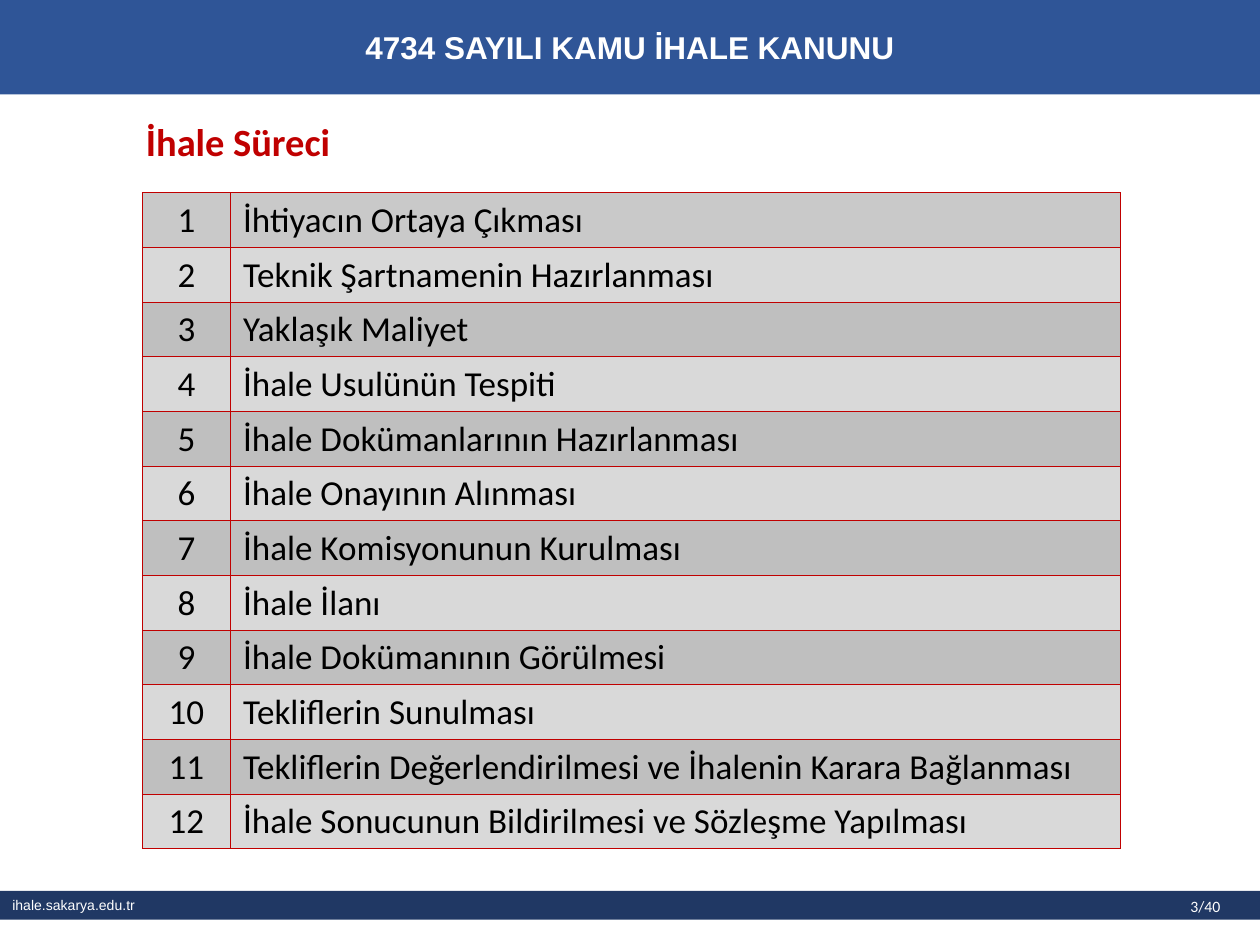
from dataclasses import dataclass

from lxml import etree
from pptx import Presentation
from pptx.dml.color import RGBColor
from pptx.enum.shapes import MSO_SHAPE
from pptx.enum.text import MSO_ANCHOR, PP_ALIGN
from pptx.oxml.ns import qn
from pptx.util import Inches, Pt

RECTANGLE = MSO_SHAPE.RECTANGLE
TOP, MIDDLE = MSO_ANCHOR.TOP, MSO_ANCHOR.MIDDLE
LEFT, CENTER = PP_ALIGN.LEFT, PP_ALIGN.CENTER
BLANK_LAYOUT = 6


@dataclass(frozen=True)
class Theme:
    header: str = "2F5597"
    footer: str = "203864"
    accent: str = "C00000"
    light: str = "FFFFFF"
    dark: str = "000000"
    first_row: str = "C9C9C9"
    bands: tuple = ("BFBFBF", "D9D9D9")
    bar_font: str = "Arial"
    body_font: str = "Calibri"
    header_size: int = 18
    heading_size: int = 22
    table_size: int = 20
    address_size: int = 8
    number_size: int = 9
    border_width: float = 0.5


THEME = Theme()

STEPS = [
    "İhtiyacın Ortaya Çıkması",
    "Teknik Şartnamenin Hazırlanması",
    "Yaklaşık Maliyet",
    "İhale Usulünün Tespiti",
    "İhale Dokümanlarının Hazırlanması",
    "İhale Onayının Alınması",
    "İhale Komisyonunun Kurulması",
    "İhale İlanı",
    "İhale Dokümanının Görülmesi",
    "Tekliflerin Sunulması",
    "Tekliflerin Değerlendirilmesi ve İhalenin Karara Bağlanması",
    "İhale Sonucunun Bildirilmesi ve Sözleşme Yapılması",
]


def write_text(frame, text, color, align=LEFT, anchor=MIDDLE, **font_format):
    frame.word_wrap = True
    frame.vertical_anchor = anchor
    para = frame.paragraphs[0]
    para.alignment = align
    span = para.add_run()
    span.text = text
    for name, value in font_format.items():
        setattr(span.font, name, value)
    span.font.color.rgb = RGBColor.from_string(color)
    return para


def add_bar(page, box, fill, text, **text_format):
    bar = page.shapes.add_shape(RECTANGLE, *box)
    bar.shadow.inherit = False
    bar.fill.solid()
    bar.fill.fore_color.rgb = RGBColor.from_string(fill)
    bar.line.fill.background()
    write_text(bar.text_frame, text, THEME.light,
               name=THEME.bar_font, **text_format)


def add_label(page, box, text, color, **text_format):
    label = page.shapes.add_textbox(*box)
    return write_text(label.text_frame, text, color,
                      name=THEME.body_font, **text_format)


def add_header(page, box):
    add_bar(page, box, THEME.header, "4734 SAYILI KAMU İHALE KANUNU",
            align=CENTER, size=Pt(THEME.header_size), bold=True)


def add_heading(page, box):
    para = add_label(page, box, "İhale Süreci", THEME.accent,
                     size=Pt(THEME.heading_size), bold=True)
    para.line_spacing = 0.9


def add_footer(page, box):
    left, top, width, height = box
    add_bar(page, box, THEME.footer, "ihale.sakarya.edu.tr",
            size=Pt(THEME.address_size))
    number_box = (left + width - Inches(0.65), top, Inches(0.93), Inches(0.25))
    add_label(page, number_box, "3/40", THEME.light, anchor=TOP,
              size=Pt(THEME.number_size))


def set_borders(cell):
    properties = cell._tc.get_or_add_tcPr()
    for position, side in enumerate(("lnL", "lnR", "lnT", "lnB")):
        line = etree.Element(qn(f"a:{side}"), w=str(Pt(THEME.border_width)))
        fill = etree.SubElement(line, qn("a:solidFill"))
        etree.SubElement(fill, qn("a:srgbClr"), val=THEME.accent)
        properties.insert(position, line)  # borders come before the fill


def add_steps_table(page, box):
    left, top, width, height = box
    table = page.shapes.add_table(len(STEPS), 2, *box).table
    number_width = Inches(0.7)
    table.columns[0].width = number_width
    table.columns[1].width = width - number_width

    for index, step in enumerate(STEPS):
        table.rows[index].height = height // len(STEPS)
        color = THEME.bands[index % 2] if index else THEME.first_row
        for column, (text, align) in enumerate(
                ((str(index + 1), CENTER), (step, LEFT))):
            cell = table.cell(index, column)
            cell.fill.solid()
            cell.fill.fore_color.rgb = RGBColor.from_string(color)
            cell.vertical_anchor = MIDDLE
            write_text(cell.text_frame, text, THEME.dark, align=align,
                       name=THEME.body_font, size=Pt(THEME.table_size),
                       bold=False)
            set_borders(cell)


def main():
    deck = Presentation()
    deck.slide_width, deck.slide_height = Inches(10), Inches(7.5)
    page = deck.slides.add_slide(deck.slide_layouts[BLANK_LAYOUT])

    # Each region with its left, top, width and height in inches
    regions = (
        (add_footer, (0, 7.07, 10, 0.23)),
        (add_header, (0, 0, 10, 0.75)),
        (add_heading, (1.06, 0.91, 9.01, 0.47)),
        (add_steps_table, (1.13, 1.53, 7.76, 5.2)),
    )
    for add_region, box in regions:
        add_region(page, tuple(Inches(length) for length in box))

    deck.save("out.pptx")


if __name__ == "__main__":
    main()
